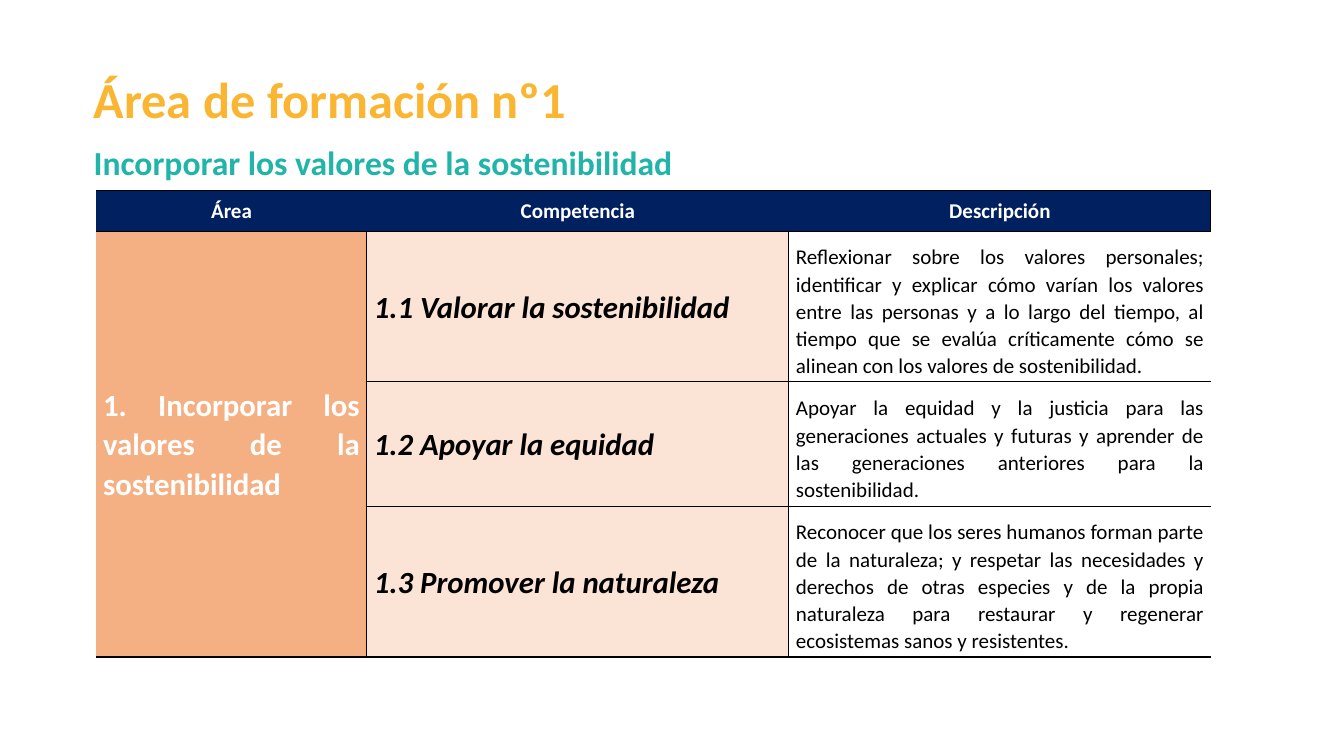
from lxml.etree import SubElement
from pptx import Presentation
from pptx.dml.color import RGBColor
from pptx.enum.text import MSO_ANCHOR, MSO_AUTO_SIZE, PP_ALIGN
from pptx.oxml.ns import qn
from pptx.util import Inches, Pt

AMBER = RGBColor(0xFA, 0xB6, 0x32)
TEAL = RGBColor(0x21, 0xB4, 0xA9)
NAVY = RGBColor(0x00, 0x20, 0x60)
ORANGE = RGBColor(0xF4, 0xB0, 0x83)
PEACH = RGBColor(0xFB, 0xE4, 0xD5)
WHITE = RGBColor(0xFF, 0xFF, 0xFF)
BLACK = RGBColor(0x00, 0x00, 0x00)

HEADERS = ["Área", "Competencia", "Descripción"]
AREA = "1. Incorporar los valores de la sostenibilidad"
COMPETENCES = [
    ("1.1 Valorar la sostenibilidad",
     "Reflexionar sobre los valores personales; identificar y explicar cómo "
     "varían los valores entre las personas y a lo largo del tiempo, al tiempo "
     "que se evalúa críticamente cómo se alinean con los valores de sostenibilidad."),
    ("1.2 Apoyar la equidad",
     "Apoyar la equidad y la justicia para las generaciones actuales y futuras "
     "y aprender de las generaciones anteriores para la sostenibilidad."),
    ("1.3 Promover la naturaleza",
     "Reconocer que los seres humanos forman parte de la naturaleza; y respetar "
     "las necesidades y derechos de otras especies y de la propia naturaleza "
     "para restaurar y regenerar ecosistemas sanos y resistentes."),
]


class SlideBuilder:
    """Places styled elements; lengths are percentages of the slide's size."""

    font = "Calibri"
    line_spacing = 1.06
    cell_margin = Inches(0.07)

    def __init__(self, deck):
        self.width, self.height = deck.slide_width, deck.slide_height
        self.slide = deck.slides.add_slide(deck.slide_layouts[5])

    def across(self, share):
        return round(self.width * share / 100)

    def down(self, share):
        return round(self.height * share / 100)

    def box(self, left, top, width, height):
        return (self.across(left), self.down(top),
                self.across(width), self.down(height))

    def add_text(self, frame, text, size, color, bold=True, italic=False,
                 align=PP_ALIGN.LEFT):
        paragraph = frame.paragraphs[0]
        paragraph.alignment = align
        run = paragraph.add_run()
        run.text = text
        font = run.font
        font.name, font.size = self.font, Pt(size)
        font.bold, font.italic = bold, italic
        font.color.rgb = color
        return paragraph

    def heading(self, shape, text, size, color):
        frame = shape.text_frame
        frame.word_wrap = True
        frame.auto_size = MSO_AUTO_SIZE.NONE
        frame.vertical_anchor = MSO_ANCHOR.TOP
        self.add_text(frame, text, size, color)

    def title(self, text, place, size, color):
        title = self.slide.shapes.title
        title.left, title.top, title.width, title.height = self.box(*place)
        self.heading(title, text, size, color)

    def subtitle(self, text, place, size, color):
        subtitle = self.slide.shapes.add_textbox(*self.box(*place))
        self.heading(subtitle, text, size, color)

    def table(self, left, top, columns, rows):
        place = self.box(left, top, sum(columns), sum(rows))
        table = self.slide.shapes.add_table(len(rows), len(columns), *place).table
        table.first_row = table.horz_banding = False
        for column, share in zip(table.columns, columns):
            column.width = self.across(share)
        for row, share in zip(table.rows, rows):
            row.height = self.down(share)
        return table

    def cell(self, cell, sides, fill=None, space_above=0):
        # Borders come before the fill in the cell properties
        properties = cell._tc.get_or_add_tcPr()
        for side in "LRTB":
            line = SubElement(properties, qn(f"a:ln{side}"), w=str(Pt(1)))
            if side in sides:
                solid = SubElement(line, qn("a:solidFill"))
                SubElement(solid, qn("a:srgbClr"), val=str(BLACK))
            else:
                SubElement(line, qn("a:noFill"))
        if fill is None:
            cell.fill.background()
        else:
            cell.fill.solid()
            cell.fill.fore_color.rgb = fill
        cell.margin_left = cell.margin_right = self.cell_margin
        cell.margin_top, cell.margin_bottom = Inches(space_above), 0
        cell.vertical_anchor = MSO_ANCHOR.MIDDLE

    def cell_text(self, cell, text, size, color, **style):
        paragraph = self.add_text(cell.text_frame, text, size, color, **style)
        paragraph.line_spacing = self.line_spacing


def main():
    deck = Presentation()
    deck.slide_width, deck.slide_height = Inches(13.33), Inches(7.5)
    builder = SlideBuilder(deck)

    # Headings
    builder.title("Área de formación nº1", (6.23, 8.4, 67.35, 9.47), 36, AMBER)
    builder.subtitle("Incorporar los valores de la sostenibilidad",
                     (6.23, 18.13, 63.1, 12.13), 24, TEAL)

    # Table grid
    table = builder.table(7.15, 25.15, columns=[20.15, 31.4, 31.4],
                          rows=[5.5, 19.87, 16.53, 19.87])

    # Header row
    for column, header in enumerate(HEADERS):
        header_cell = table.cell(0, column)
        builder.cell(header_cell, "RTB" if header == HEADERS[-1] else "TB", NAVY)
        builder.cell_text(header_cell, header, 15, WHITE, align=PP_ALIGN.CENTER)

    # Competences and their descriptions
    justified = PP_ALIGN.JUSTIFY
    for row, (competence, description) in enumerate(COMPETENCES, start=1):
        area_cell, competence_cell, description_cell = (
            table.cell(row, column) for column in range(len(HEADERS)))
        builder.cell(area_cell, "RTB", ORANGE)
        builder.cell(competence_cell, "LRTB", PEACH)
        builder.cell_text(competence_cell, competence, 22, BLACK,
                          italic=True, align=justified)
        builder.cell(description_cell, "LTB", space_above=0.09)
        builder.cell_text(description_cell, description, 15, BLACK,
                          bold=False, align=justified)

    # Area spanning all competences
    area = table.cell(1, 0)
    area.merge(table.cell(len(COMPETENCES), 0))
    builder.cell_text(area, AREA, 22, WHITE, align=justified)

    deck.save("out.pptx")


if __name__ == "__main__":
    main()
